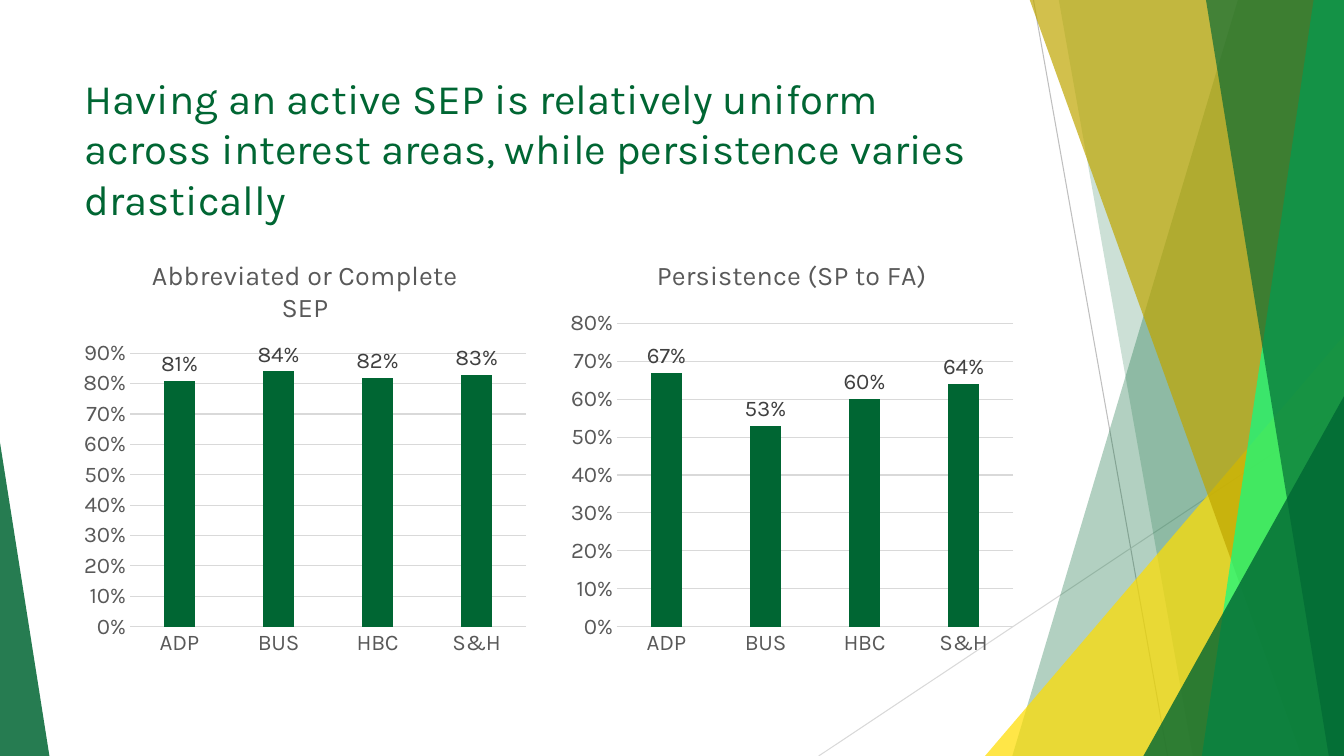
import pptx
import pptx.chart.data
import pptx.dml.color
import pptx.enum.chart
import pptx.enum.shapes
import pptx.enum.text
import pptx.oxml.ns
import pptx.util
from lxml import etree

Inches = pptx.util.Inches
Pt = pptx.util.Pt
qn = pptx.oxml.ns.qn

WIDTH, HEIGHT = 13.33, 7.5
GREEN = "006633"
GRID = "D9D9D9"
AXIS_TEXT = "595959"


def color(hex_code):
    return pptx.dml.color.RGBColor.from_string(hex_code)


class SlideBuilder:
    font_name = "Karla"

    def __init__(self, slide):
        self.slide = slide

    def style(self, font, size, hex_code):
        font.name = self.font_name
        font.size = Pt(size)
        font.bold = False
        font.color.rgb = color(hex_code)

    def line(self, start, end, hex_code):
        ray = self.slide.shapes.add_connector(
            pptx.enum.shapes.MSO_CONNECTOR.STRAIGHT,
            *map(Inches, start + end))
        ray.line.color.rgb = color(hex_code)
        ray.line.width = Pt(0.75)
        etree.SubElement(ray._element.spPr, qn("a:effectLst"))

    def paint(self, facet, hex_code, opacity):
        facet.shadow.inherit = False
        facet.line.fill.background()
        facet.fill.solid()
        facet.fill.fore_color.rgb = color(hex_code)
        solid = facet._element.spPr.find(qn("a:solidFill"))
        etree.SubElement(solid[0], qn("a:alpha"), val=str(opacity * 1000))

    def band(self, top_x, bottom_x, hex_code, opacity):
        top = Inches(-0.01)
        right, bottom = Inches(WIDTH), Inches(HEIGHT)
        outline = self.slide.shapes.build_freeform(Inches(top_x), top)
        outline.add_line_segments(
            [(right, top), (right, bottom), (Inches(bottom_x), bottom)])
        self.paint(outline.convert_to_shape(), hex_code, opacity)

    def corner(self, left, top, width, apex, hex_code, opacity):
        wedge = self.slide.shapes.add_shape(
            pptx.enum.shapes.MSO_SHAPE.ISOSCELES_TRIANGLE,
            *map(Inches, (left, top, width, HEIGHT - top)))
        wedge.adjustments[0] = apex
        self.paint(wedge, hex_code, opacity)

    def title(self, text):
        heading = self.slide.shapes.title
        heading.left, heading.top = Inches(0.74), Inches(0.67)
        heading.width, heading.height = Inches(9.4), Inches(1.44)
        frame = heading.text_frame
        frame.text = text
        frame.word_wrap = True
        frame.auto_size = pptx.enum.text.MSO_AUTO_SIZE.NONE
        frame.vertical_anchor = pptx.enum.text.MSO_ANCHOR.TOP
        frame.paragraphs[0].alignment = pptx.enum.text.PP_ALIGN.LEFT
        self.style(frame.paragraphs[0].font, 30, GREEN)

    def plot_layout(self, chart, top, height):
        area = chart._chartSpace.chart.plotArea
        for old in area.findall(qn("c:layout")):
            area.remove(old)
        layout = etree.Element(qn("c:layout"))
        area.insert(0, layout)
        manual = etree.SubElement(layout, qn("c:manualLayout"))
        for tag, value in (("layoutTarget", "inner"), ("xMode", "edge"),
                           ("yMode", "edge"), ("x", 0.12), ("y", top),
                           ("w", 0.86), ("h", height)):
            etree.SubElement(manual, qn("c:" + tag), val=str(value))

    def columns(self, left, heading, areas, rates, maximum, plot_top):
        data = pptx.chart.data.CategoryChartData(number_format="0%")
        data.categories = areas
        data.add_series("Series 1", rates)
        chart = self.slide.shapes.add_chart(
            pptx.enum.chart.XL_CHART_TYPE.COLUMN_CLUSTERED,
            *map(Inches, (left, 2.36, 4.57, 4.24)), data).chart
        self.style(chart.font, 16, "000000")
        chart.has_legend = False
        chart.has_title = True
        chart.chart_title.include_in_layout = False
        caption = chart.chart_title.text_frame
        caption.text = heading
        self.style(caption.paragraphs[0].font, 19.2, AXIS_TEXT)

        for axis in (chart.category_axis, chart.value_axis):
            axis.major_tick_mark = pptx.enum.chart.XL_TICK_MARK.NONE
            axis.minor_tick_mark = pptx.enum.chart.XL_TICK_MARK.NONE
            self.style(axis.tick_labels.font, 16, AXIS_TEXT)
        baseline = chart.category_axis.format.line
        gridlines = chart.value_axis.major_gridlines.format.line
        for rule in (baseline, gridlines):
            rule.color.rgb = color(GRID)
            rule.width = Pt(0.75)
        scale = chart.value_axis
        scale.format.line.fill.background()
        scale.minimum_scale, scale.maximum_scale = 0, maximum
        scale.major_unit = 0.1
        scale.tick_labels.number_format = "0%"
        scale.tick_labels.number_format_is_linked = False

        plot = chart.plots[0]
        plot.vary_by_categories = False
        plot.gap_width, plot.overlap = 219, -27
        bars = plot.series[0].format
        bars.fill.solid()
        bars.fill.fore_color.rgb = color(GREEN)
        plot.has_data_labels = True
        labels = plot.data_labels
        labels.show_value = True
        labels.number_format = "0%"
        labels.number_format_is_linked = False
        labels.position = pptx.enum.chart.XL_LABEL_POSITION.OUTSIDE_END
        self.style(labels.font, 16, "404040")
        self.plot_layout(chart, plot_top, round(0.91 - plot_top, 2))


def main():
    deck = pptx.Presentation()
    deck.slide_width, deck.slide_height = Inches(WIDTH), Inches(HEIGHT)
    builder = SlideBuilder(deck.slides.add_slide(deck.slide_layouts[5]))

    builder.line((10.25, 0), (11.58, HEIGHT), "BFBFBF")
    builder.line((WIDTH, 4.03), (8.12, HEIGHT), GRID)
    builder.band(12.28, 10.04, GREEN, 30)
    builder.band(10.5, 11.83, GREEN, 20)
    builder.corner(9.77, 3.33, 3.56, 1, "FFDD00", 72)
    builder.band(10.21, 12.91, "BFA600", 70)
    builder.band(13.03, 11.92, "0AFF85", 70)
    builder.band(11.96, 13.18, GREEN, 65)
    builder.corner(11.34, 3.93, 1.99, 1, GREEN, 80)
    builder.corner(0, 4.39, 0.49, 0, GREEN, 85)

    builder.title("Having an active SEP is relatively uniform across interest "
                  "areas, while persistence varies drastically")
    areas = ["ADP", "BUS", "HBC", "S&H"]
    builder.columns(0.74, "Abbreviated or Complete SEP", areas,
                    [0.81, 0.84, 0.82, 0.83], 0.9, 0.27)
    builder.columns(5.57, "Persistence (SP to FA)", areas,
                    [0.67, 0.53, 0.6, 0.64], 0.8, 0.2)
    deck.save("out.pptx")


if __name__ == "__main__":
    main()
